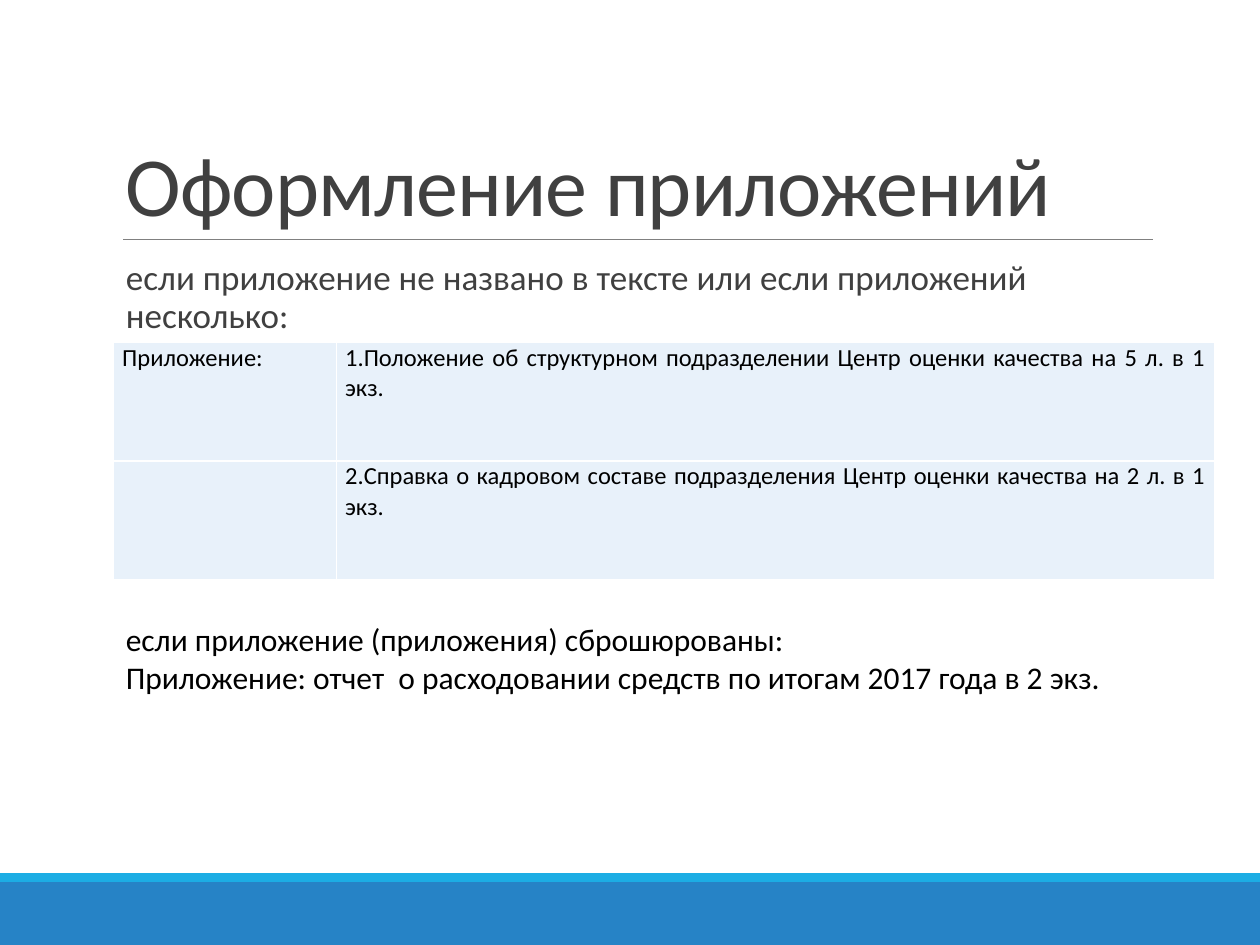
from dataclasses import dataclass

from lxml.etree import SubElement
from pptx import Presentation
from pptx.dml.color import RGBColor
from pptx.enum.shapes import MSO_CONNECTOR, MSO_SHAPE
from pptx.enum.text import MSO_ANCHOR, PP_ALIGN
from pptx.oxml.ns import qn
from pptx.util import Inches, Pt


@dataclass(frozen=True)
class Theme:
    font: str = "Calibri"
    blue: str = "2683C6"
    accent: str = "1CADE4"
    rule: str = "808080"
    heading: str = "404040"
    text: str = "000000"
    cell: str = "E8F1FA"
    border: str = "FFFFFF"
    title_size: int = 48
    body_size: int = 20
    note_size: int = 18
    table_size: int = 14


theme = Theme()


def add_run(p, text, size, color):
    r = p.add_run()
    r.text = text
    r.font.name = theme.font
    r.font.size = Pt(size)
    r.font.color.rgb = RGBColor.from_string(color)
    return r


def add_text_frame(slide, left, top, width, height):
    tf = slide.shapes.add_textbox(
        Inches(left), Inches(top), Inches(width), Inches(height)).text_frame
    tf.word_wrap = True
    return tf


prs = Presentation()
prs.slide_width = Inches(10)
prs.slide_height = Inches(7.5)
s = prs.slides.add_slide(prs.slide_layouts[6])

for top, height, color in [(7, 0.5, theme.blue), (6.93, 0.07, theme.accent)]:
    sp = s.shapes.add_shape(
        MSO_SHAPE.RECTANGLE, 0, Inches(top), prs.slide_width, Inches(height))
    sp.shadow.inherit = False
    sp.fill.solid()
    sp.fill.fore_color.rgb = RGBColor.from_string(color)
    sp.line.fill.background()

rule = s.shapes.add_connector(
    MSO_CONNECTOR.STRAIGHT, Inches(0.98), Inches(1.9), Inches(9.15), Inches(1.9))
rule.line.color.rgb = RGBColor.from_string(theme.rule)
rule.line.width = Pt(0.5)
SubElement(rule._element.spPr, qn("a:effectLst"))

tf = add_text_frame(s, 0.9, 0.31, 8.25, 1.59)
tf.vertical_anchor = MSO_ANCHOR.BOTTOM
p = tf.paragraphs[0]
p.line_spacing = 0.85
r = add_run(p, "Оформление приложений", theme.title_size, theme.heading)
r.font._element.set("spc", "-50")

tf = add_text_frame(s, 0.9, 2.02, 8.37, 0.8)
tf.margin_left = tf.margin_right = 0
p = tf.paragraphs[0]
p.line_spacing = 0.9
p.space_before = Pt(12)
p.space_after = Pt(2)
p._p.get_or_add_pPr().set("marL", str(Inches(0.1)))
add_run(p, "если приложение не названо в тексте или если приложений несколько:",
        theme.body_size, theme.heading)

rows = [
    ["Приложение:",
     "1.Положение об структурном подразделении Центр оценки качества на 5 л. в 1 экз."],
    ["",
     "2.Справка о кадровом составе подразделения Центр оценки качества на 2 л. в 1 экз."],
]
table = s.shapes.add_table(
    2, 2, Inches(0.9), Inches(2.72), Inches(8.74), Inches(1.88)).table
table.first_row = False
table.horz_banding = False
for column, width in zip(table.columns, [1.77, 6.97]):
    column.width = Inches(width)

for row, texts in zip(table.rows, rows):
    row.height = Inches(0.94)
    for cell, text in zip(row.cells, texts):
        cell.margin_left = cell.margin_right = Inches(0.07)
        cell.margin_top = cell.margin_bottom = 0
        tcPr = cell._tc.get_or_add_tcPr()
        for side in ["lnL", "lnR", "lnT", "lnB"]:
            ln = SubElement(tcPr, qn(f"a:{side}"), w=str(Pt(1)))
            SubElement(SubElement(ln, qn("a:solidFill")), qn("a:srgbClr"),
                       val=theme.border)
        cell.fill.solid()
        cell.fill.fore_color.rgb = RGBColor.from_string(theme.cell)
        if text:
            p = cell.text_frame.paragraphs[0]
            p.alignment = PP_ALIGN.JUSTIFY
            p.line_spacing = Pt(17.3)
            add_run(p, text, theme.table_size, theme.text)

tf = add_text_frame(s, 0.9, 4.87, 8.74, 0.71)
add_run(tf.paragraphs[0], "если приложение (приложения) сброшюрованы:",
        theme.note_size, theme.text)
add_run(tf.add_paragraph(),
        "Приложение: отчет  о расходовании средств по итогам 2017 года в 2 экз.",
        theme.note_size, theme.text)

prs.save("out.pptx")
